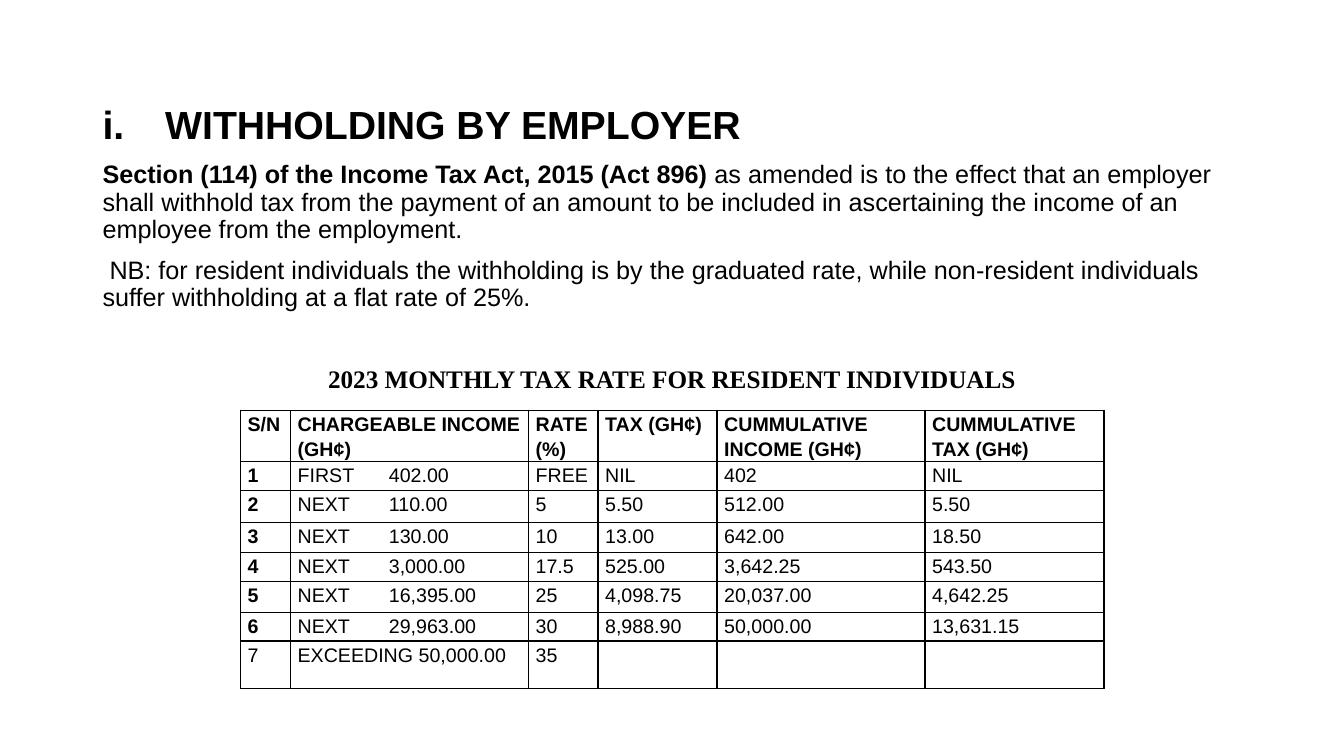
from lxml import etree
from pptx import Presentation
from pptx import util as u
from pptx.dml.color import RGBColor
from pptx.enum import text
from pptx.oxml.ns import qn

BULLET_TAGS = {"none": "a:buNone", "romanLcPeriod": "a:buAutoNum"}
ROW_HEIGHTS = [1.29, 0.73, 0.81, 0.76, 0.73, 0.78, 0.71, 1.2]
COLUMN_WIDTHS = [1.26, 6, 1.75, 3, 5.24, 4.51]
TAX_RATES = [
    ["S/N", "CHARGEABLE INCOME (GH¢)", "RATE (%)", "TAX (GH¢)",
     "CUMMULATIVE INCOME (GH¢)", "CUMMULATIVE TAX (GH¢)"],
    ["1", "FIRST\t402.00", "FREE", "NIL", "402", "NIL"],
    ["2", "NEXT\t110.00", "5", "5.50", "512.00", "5.50"],
    ["3", "NEXT\t130.00", "10", "13.00", "642.00", "18.50"],
    ["4", "NEXT\t3,000.00", "17.5", "525.00", "3,642.25", "543.50"],
    ["5", "NEXT\t16,395.00", "25", "4,098.75", "20,037.00", "4,642.25"],
    ["6", "NEXT\t29,963.00", "30", "8,988.90", "50,000.00", "13,631.15"],
    ["7", "EXCEEDING 50,000.00", "35", "", "", ""],
]


def color(hex_string):
    return RGBColor.from_string(hex_string)


def add_text(paragraph, content, size=18, font="Arial", bold=False, ink="000000"):
    run = paragraph.add_run()
    run.text = content
    run.font.size = u.Pt(size)
    run.font.name = font
    run.font.bold = bold
    run.font.color.rgb = color(ink)


class SlideBuilder:
    """Hold the slide and its style, and add each kind of element."""

    line_color = "000000"
    cell_inset = u.Cm(0.18)
    amount_tab = u.Cm(2.3)

    def __init__(self, presentation):
        self.slide = presentation.slides.add_slide(presentation.slide_layouts[1])
        title = self.slide.shapes.title
        title.element.getparent().remove(title.element)

    def body(self, left, top, width, height):
        shape = self.slide.placeholders[1]
        shape.left, shape.top = u.Cm(left), u.Cm(top)
        shape.width, shape.height = u.Cm(width), u.Cm(height)
        frame = shape.text_frame
        frame.word_wrap = True
        frame.auto_size = text.MSO_AUTO_SIZE.NONE
        frame.vertical_anchor = text.MSO_ANCHOR.TOP
        return frame

    def paragraph(self, paragraph, runs, before=10, numbering="none", indent=0,
                  align=text.PP_ALIGN.LEFT):
        properties = paragraph._p.get_or_add_pPr()
        properties.set("marL", str(u.Cm(indent)))
        properties.set("indent", str(-u.Cm(indent)))
        bullet = etree.SubElement(properties, qn(BULLET_TAGS[numbering]))
        if numbering != "none":
            bullet.set("type", numbering)
        paragraph.alignment = align
        paragraph.line_spacing = 0.9
        paragraph.space_before = u.Pt(before)
        for content, style in runs:
            add_text(paragraph, content, **style)

    def border(self, cell):
        properties = cell._tc.get_or_add_tcPr()
        for side in "LRTB":
            line = etree.SubElement(properties, qn(f"a:ln{side}"), w=str(u.Pt(1)))
            fill = etree.SubElement(line, qn("a:solidFill"))
            etree.SubElement(fill, qn("a:srgbClr"), val=self.line_color)

    def cell(self, cell, content, bold):
        self.border(cell)
        cell.fill.background()
        cell.margin_left = cell.margin_right = self.cell_inset
        cell.margin_top = cell.margin_bottom = 0
        paragraph = cell.text_frame.paragraphs[0]
        if "\t" in content:
            tabs = etree.SubElement(paragraph._p.get_or_add_pPr(), qn("a:tabLst"))
            etree.SubElement(tabs, qn("a:tab"), pos=str(self.amount_tab), algn="l")
        paragraph.line_spacing = 1.15
        if content:
            add_text(paragraph, content, size=14, bold=bold)

    def table(self, left, top, widths, heights, rows):
        table = self.slide.shapes.add_table(
            len(rows), len(widths), u.Cm(left), u.Cm(top),
            u.Cm(sum(widths)), u.Cm(sum(heights))).table
        table.first_row = table.horz_banding = False
        for column, width in zip(table.columns, widths):
            column.width = u.Cm(width)
        last = len(rows) - 1
        for i, (height, row) in enumerate(zip(heights, rows)):
            table.rows[i].height = u.Cm(height)
            for j, content in enumerate(row):
                bold = i == 0 or (j == 0 and i < last)
                self.cell(table.cell(i, j), content, bold)


def main():
    presentation = Presentation()
    presentation.slide_width, presentation.slide_height = u.Cm(33.87), u.Cm(19.05)
    builder = SlideBuilder(presentation)
    frame = builder.body(2.33, 2.54, 29.21, 15.16)
    builder.paragraph(
        frame.paragraphs[0],
        [("WITHHOLDING BY EMPLOYER", {"size": 28, "bold": True})],
        before=0, numbering="romanLcPeriod", indent=1.58)
    builder.paragraph(frame.add_paragraph(), [
        ("Section (114) of the Income Tax Act, 2015 (Act 896) ", {"bold": True}),
        ("as amended is to the effect that an employer shall withhold tax from the "
         "payment of an amount to be included in ascertaining the income of an "
         "employee from the employment.", {})])
    builder.paragraph(frame.add_paragraph(), [
        (" NB: for resident individuals the withholding is by the graduated rate, "
         "while non-resident individuals suffer withholding at a flat rate of 25%.",
         {})])
    builder.paragraph(
        frame.add_paragraph(),
        [("2023 MONTHLY TAX RATE FOR RESIDENT INDIVIDUALS",
          {"font": "Times New Roman", "bold": True})],
        before=39, align=text.PP_ALIGN.CENTER)
    builder.table(6.06, 10.34, COLUMN_WIDTHS, ROW_HEIGHTS, TAX_RATES)
    presentation.save("out.pptx")


if __name__ == "__main__":
    main()
